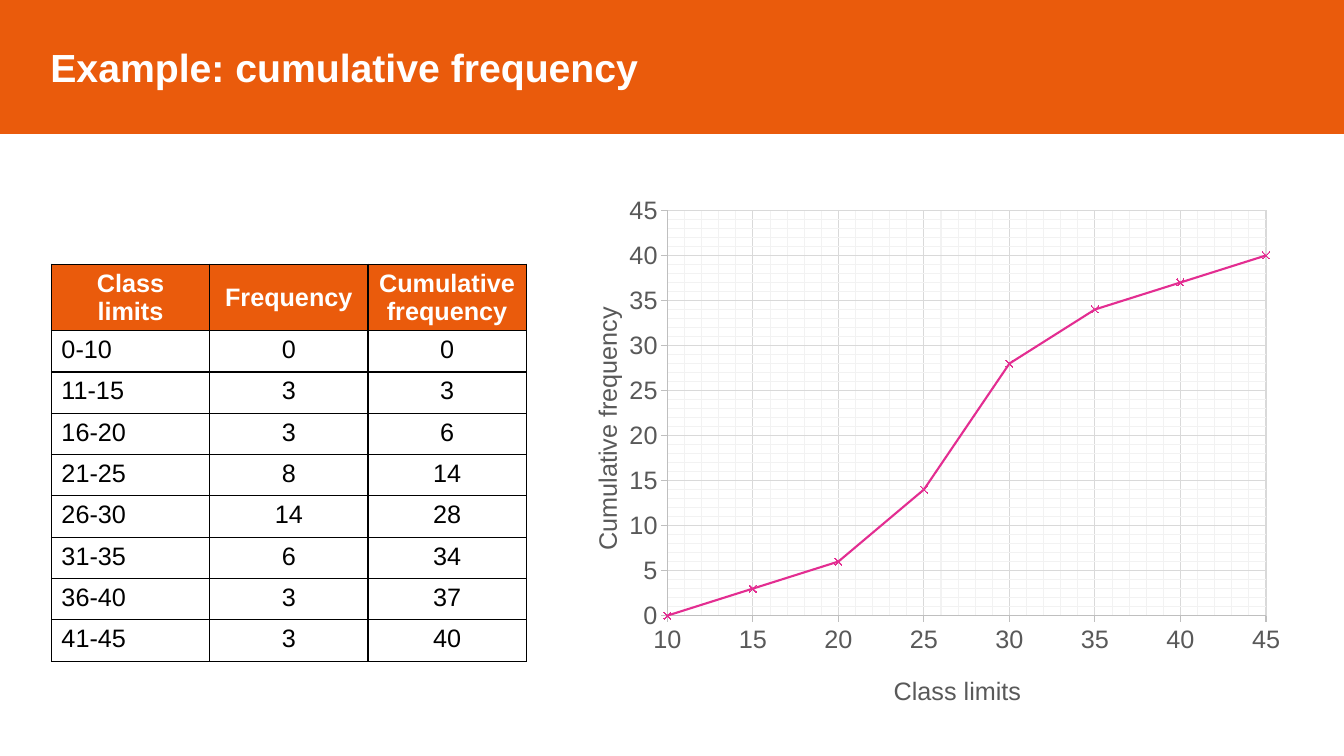
import pptx
import pptx.chart.data
import pptx.dml.color
import pptx.enum.chart
import pptx.enum.text
import pptx.oxml
import pptx.oxml.ns
import pptx.util

TITLE = "Example: cumulative frequency"
HEADERS = ("Class limits", "Frequency", "Cumulative frequency")
FREQUENCIES = (
    ("0-10", 0),
    ("11-15", 3),
    ("16-20", 3),
    ("21-25", 8),
    ("26-30", 14),
    ("31-35", 6),
    ("36-40", 3),
    ("41-45", 3),
)
FONT = "Arial"
ORANGE, WHITE, BLACK = "EA5B0C", "FFFFFF", "000000"
PINK, GRAY, AXIS_GRAY = "E32D91", "595959", "BFBFBF"
MAJOR_GRAY, MINOR_GRAY = "D9D9D9", "F2F2F2"
SLIDE_WIDTH, SLIDE_HEIGHT, BANNER_HEIGHT = 13.33, 7.5, 1.32
COLUMN_WIDTH, HEADER_HEIGHT, ROW_HEIGHT = 1.57, 0.66, 0.41
CENTER = pptx.enum.text.PP_ALIGN.CENTER
LEFT = pptx.enum.text.PP_ALIGN.LEFT
MIDDLE = pptx.enum.text.MSO_ANCHOR.MIDDLE
TOP = pptx.enum.text.MSO_ANCHOR.TOP


def color(value):
    return pptx.dml.color.RGBColor.from_string(value)


def set_fill(fill, value):
    fill.solid()
    fill.fore_color.rgb = color(value)


def set_line(line, value, width):
    set_fill(line.fill, value)
    line.width = pptx.util.Pt(width)


def set_font(font, value, size=18, bold=False):
    font.name = FONT
    font.size = pptx.util.Pt(size)
    font.bold = bold
    font.color.rgb = color(value)


def line_xml(tag, value, width):
    return pptx.oxml.parse_xml(
        f'<a:{tag} {pptx.oxml.ns.nsdecls("a")} w="{pptx.util.Pt(width)}"><a:solidFill>'
        f'<a:srgbClr val="{value}"/></a:solidFill></a:{tag}>')


def set_borders(cell):
    properties = cell._tc.get_or_add_tcPr()
    for side in ("lnL", "lnR", "lnT", "lnB"):
        properties.append(line_xml(side, BLACK, 1))


def set_minor_gridlines(axis):
    axis.has_minor_gridlines = True
    gridlines = axis._element.find(pptx.oxml.ns.qn("c:minorGridlines"))
    properties = pptx.oxml.parse_xml(f'<c:spPr {pptx.oxml.ns.nsdecls("c")}/>')
    properties.append(line_xml("ln", MINOR_GRAY, 0.75))
    gridlines.append(properties)


def place(parent, position, target=""):
    for layout in parent.findall(pptx.oxml.ns.qn("c:layout")):
        parent.remove(layout)
    modes = "".join(f'<c:{side}Mode val="edge"/>' for side in "xy")
    shares = "".join(f'<c:{side} val="{share}"/>' for side, share in zip("xywh", position))
    layout = pptx.oxml.parse_xml(
        f'<c:layout {pptx.oxml.ns.nsdecls("c")}><c:manualLayout>'
        f'{target}{modes}{shares}</c:manualLayout></c:layout>')
    text = parent.find(pptx.oxml.ns.qn("c:tx"))
    parent.insert(0 if text is None else parent.index(text) + 1, layout)


def add_banner(slide):
    title = slide.shapes.title
    title.left = title.top = 0
    title.width = pptx.util.Inches(SLIDE_WIDTH)
    title.height = pptx.util.Inches(BANNER_HEIGHT)
    set_fill(title.fill, ORANGE)
    set_line(title.line, ORANGE, 1)
    frame = title.text_frame
    frame.text = TITLE
    frame.margin_left = pptx.util.Inches(0.5)
    frame.vertical_anchor = MIDDLE
    paragraph = frame.paragraphs[0]
    paragraph.alignment = LEFT
    set_font(paragraph.font, WHITE, 28, True)


def add_frequency_table(slide, cumulative):
    rows = [HEADERS] + [(*row, total) for row, total in zip(FREQUENCIES, cumulative)]
    heights = [HEADER_HEIGHT] + [ROW_HEIGHT] * len(FREQUENCIES)
    table = slide.shapes.add_table(
        len(rows), len(HEADERS), pptx.util.Inches(0.51), pptx.util.Inches(2.62),
        pptx.util.Inches(COLUMN_WIDTH * len(HEADERS)), pptx.util.Inches(sum(heights))).table
    for column in table.columns:
        column.width = pptx.util.Inches(COLUMN_WIDTH)
    for row_index, (values, height) in enumerate(zip(rows, heights)):
        table.rows[row_index].height = pptx.util.Inches(height)
        header = row_index == 0
        for column_index, value in enumerate(values):
            cell = table.cell(row_index, column_index)
            set_borders(cell)
            set_fill(cell.fill, ORANGE if header else WHITE)
            cell.text = str(value)
            cell.vertical_anchor = MIDDLE if header else TOP
            paragraph = cell.text_frame.paragraphs[0]
            paragraph.alignment = CENTER if header or column_index else LEFT
            set_font(paragraph.font, WHITE if header else BLACK, bold=header)


def format_axis(axis, title, title_position, minimum, rotation):
    axis.minimum_scale, axis.maximum_scale = minimum, 45
    axis.major_unit, axis.minor_unit = 5, 1
    axis.major_tick_mark = pptx.enum.chart.XL_TICK_MARK.OUTSIDE
    axis.minor_tick_mark = pptx.enum.chart.XL_TICK_MARK.NONE
    axis.has_major_gridlines = True
    set_line(axis.major_gridlines.format.line, MAJOR_GRAY, 0.75)
    set_minor_gridlines(axis)
    set_line(axis.format.line, AXIS_GRAY, 0.75)
    set_font(axis.tick_labels.font, GRAY)
    frame = axis.axis_title.text_frame
    frame.text = title
    frame._txBody.bodyPr.set("rot", str(rotation * 60000))
    set_font(frame.paragraphs[0].font, GRAY)
    place(axis.axis_title._element, title_position)


def add_cumulative_chart(slide, cumulative):
    data = pptx.chart.data.XyChartData()
    points = data.add_series("Series 1")
    for (limits, _), total in zip(FREQUENCIES, cumulative):
        points.add_data_point(int(limits.split("-")[1]), total)
    chart = slide.shapes.add_chart(
        pptx.enum.chart.XL_CHART_TYPE.XY_SCATTER_SMOOTH,
        pptx.util.Inches(5.52), pptx.util.Inches(1.82),
        pptx.util.Inches(7.33), pptx.util.Inches(5.36), data).chart
    chart.has_title = chart.has_legend = False
    set_font(chart.font, BLACK)
    plot = chart.plots[0]
    plot.vary_by_categories = False
    series = plot.series[0]
    series.smooth = True
    set_line(series.format.line, PINK, 1.5)
    series.marker.style = pptx.enum.chart.XL_MARKER_STYLE.X
    series.marker.size = 5
    series.marker.format.fill.background()
    set_line(series.marker.format.line, PINK, 0.75)
    format_axis(chart.category_axis, "Class limits", (0.45, 0.9), 10, 0)
    format_axis(chart.value_axis, "Cumulative frequency", (0.04, 0.22), 0, -90)
    plot_area = chart._chartSpace.chart.plotArea
    place(plot_area, (0.15, 0.05, 0.81, 0.75), '<c:layoutTarget val="inner"/>')


def main():
    presentation = pptx.Presentation()
    presentation.slide_width = pptx.util.Inches(SLIDE_WIDTH)
    presentation.slide_height = pptx.util.Inches(SLIDE_HEIGHT)
    slide = presentation.slides.add_slide(presentation.slide_layouts.get_by_name("Title Only"))
    cumulative = []
    for _, frequency in FREQUENCIES:
        cumulative.append(sum(cumulative[-1:]) + frequency)
    add_banner(slide)
    add_frequency_table(slide, cumulative)
    add_cumulative_chart(slide, cumulative)
    presentation.save("out.pptx")


if __name__ == "__main__":
    main()
